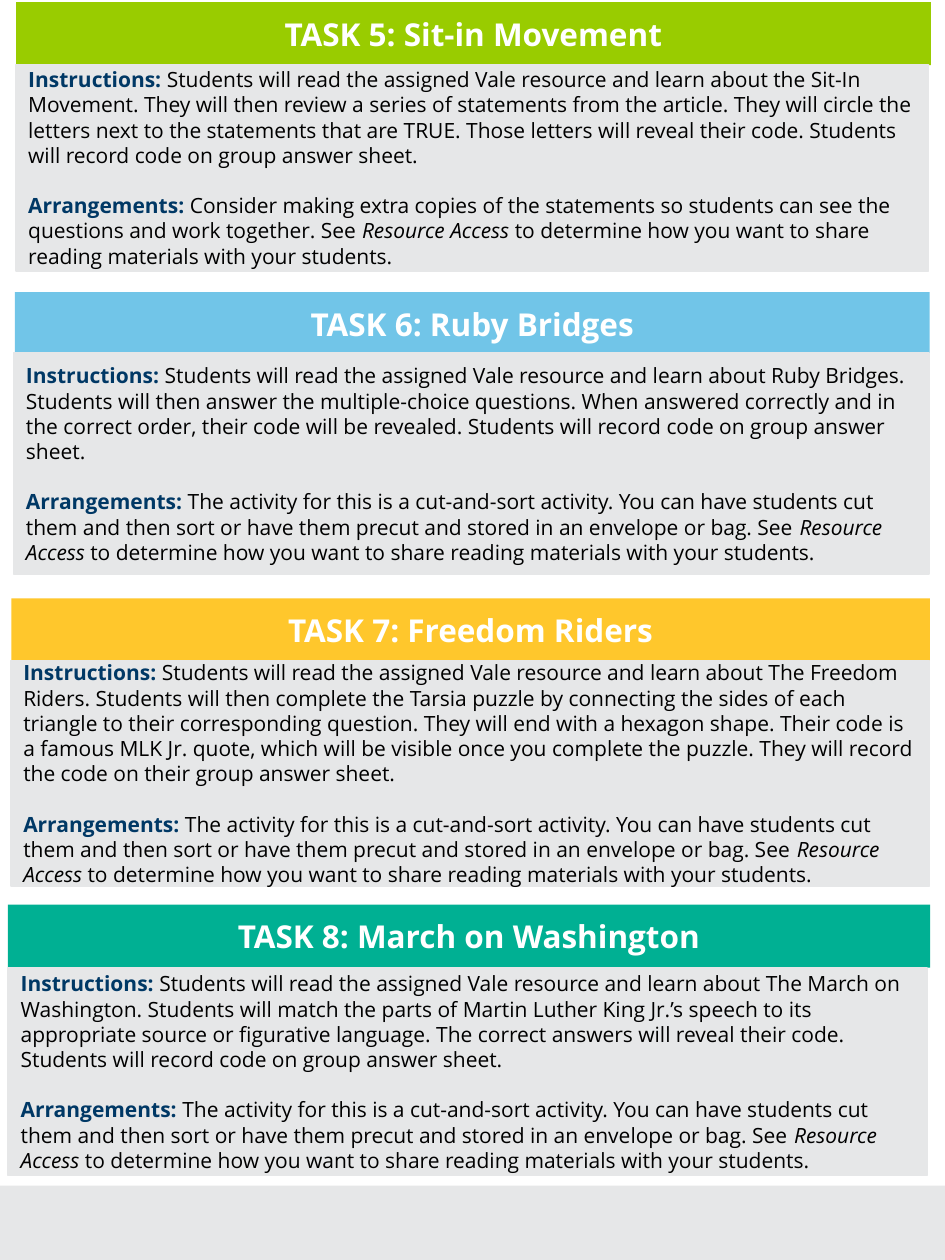
from pptx import Presentation
from pptx.dml.color import RGBColor
from pptx.enum.shapes import MSO_SHAPE
from pptx.enum.text import MSO_ANCHOR, PP_ALIGN
from pptx.util import Pt

RECT = MSO_SHAPE.RECTANGLE
MIDDLE = MSO_ANCHOR.MIDDLE
LEFT, CENTER = PP_ALIGN.LEFT, PP_ALIGN.CENTER

WHITE = RGBColor(0xFF, 0xFF, 0xFF)
BLACK = RGBColor(0, 0, 0)
NAVY = RGBColor(0x00, 0x38, 0x65)
GRAY = RGBColor(0xE6, 0xE7, 0xE8)
GREEN = RGBColor(0x99, 0xCC, 0x00)
BLUE = RGBColor(0x71, 0xC5, 0xE8)
GOLD = RGBColor(0xFF, 0xC7, 0x2C)
TEAL = RGBColor(0x00, 0xB0, 0x93)

FONT = "Open Sans"
LEAD = Pt(14.4)
WIDE, HIGH = 540, 720
BAND = 36

START = "Students will read the assigned Vale resource and learn about "
END = "to determine how you want to share reading materials with your students."
COPIES = (
    "Consider making extra copies of the statements so students can see the "
    "questions and work together. See "
)
SORT = (
    "The activity for this is a cut-and-sort activity. You can have students "
    "cut them and then sort or have them precut and stored in an envelope or "
    "bag. See "
)

TASKS = [
    {
        "title": "TASK 5: Sit-in Movement", "color": GREEN,
        "band": (9.2, 1.3, 522.7), "body": (9, 36.8, 521.6, 117.9),
        "steps": "the Sit-In Movement. They will then review a series of "
        "statements from the article. They will circle the letters next to "
        "the statements that are TRUE. Those letters will reveal their code. "
        "Students will record code on group answer sheet.",
        "setup": COPIES,
    },
    {
        "title": "TASK 6: Ruby Bridges", "color": BLUE,
        "band": (8.6, 167, 522.7), "body": (7.8, 201.9, 523, 126),
        "steps": "Ruby Bridges. Students will then answer the multiple-choice "
        "questions. When answered correctly and in the correct order, their "
        "code will be revealed. Students will record code on group answer "
        "sheet.",
        "setup": SORT,
    },
    {
        "title": "TASK 7: Freedom Riders", "color": GOLD,
        "band": (6.5, 342, 524.9), "body": (6.2, 377.4, 524.9, 128.9),
        "steps": "The Freedom Riders. Students will then complete the Tarsia "
        "puzzle by connecting the sides of each triangle to their "
        "corresponding question. They will end with a hexagon shape. Their "
        "code is a famous MLK Jr. quote, which will be visible once you "
        "complete the puzzle. They will record the code on their group "
        "answer sheet.",
        "setup": SORT,
    },
    {
        "title": "TASK 8: March on Washington", "color": TEAL,
        "band": (4.5, 517, 527), "body": (4.7, 553, 524.9, 118.8),
        "steps": "The March on Washington. Students will match the parts of "
        "Martin Luther King Jr.’s speech to its appropriate source or "
        "figurative language. The correct answers will reveal their code. "
        "Students will record code on group answer sheet.",
        "setup": SORT,
    },
]


def add_box(slide, place, color):
    box = slide.shapes.add_shape(RECT, *map(Pt, place))
    box.shadow.inherit = False
    box.fill.solid()
    box.fill.fore_color.rgb = color
    box.line.fill.background()
    box.text_frame.word_wrap = True
    box.text_frame.vertical_anchor = MIDDLE
    return box


def add_band(slide, task):
    box = add_box(slide, (*task["band"], BAND), task["color"])
    para = box.text_frame.paragraphs[0]
    para.text = task["title"]
    para.alignment = CENTER
    para.font.name = FONT
    para.font.size = Pt(18)
    para.font.bold = True
    para.font.color.rgb = WHITE


def fill_para(para, label, parts):
    para.alignment = LEFT
    para.line_spacing = LEAD
    para.font.name = FONT
    para.font.size = Pt(12)
    para.font.color.rgb = BLACK
    head = para.add_run()
    head.text = label + ": "
    head.font.bold = True
    head.font.color.rgb = NAVY
    for text, slant in parts:
        run = para.add_run()
        run.text = text
        if slant:
            run.font.italic = True


def add_body(slide, task):
    box = add_box(slide, task["body"], GRAY)
    box.line.color.rgb = GRAY
    box.line.width = Pt(1)
    frame = box.text_frame
    fill_para(frame.paragraphs[0], "Instructions",
              [(START + task["steps"], False)])
    para = frame.add_paragraph()
    para.space_before = LEAD
    fill_para(para, "Arrangements",
              [(task["setup"], False), ("Resource Access ", True), (END, False)])


def main():
    deck = Presentation()
    deck.slide_width, deck.slide_height = Pt(WIDE), Pt(HIGH)
    slide = deck.slides.add_slide(deck.slide_layouts[6])
    add_box(slide, (0, 677.5, WIDE, 42.5), GRAY)
    for task in TASKS:
        add_band(slide, task)
        add_body(slide, task)
    deck.save("out.pptx")


if __name__ == "__main__":
    main()
